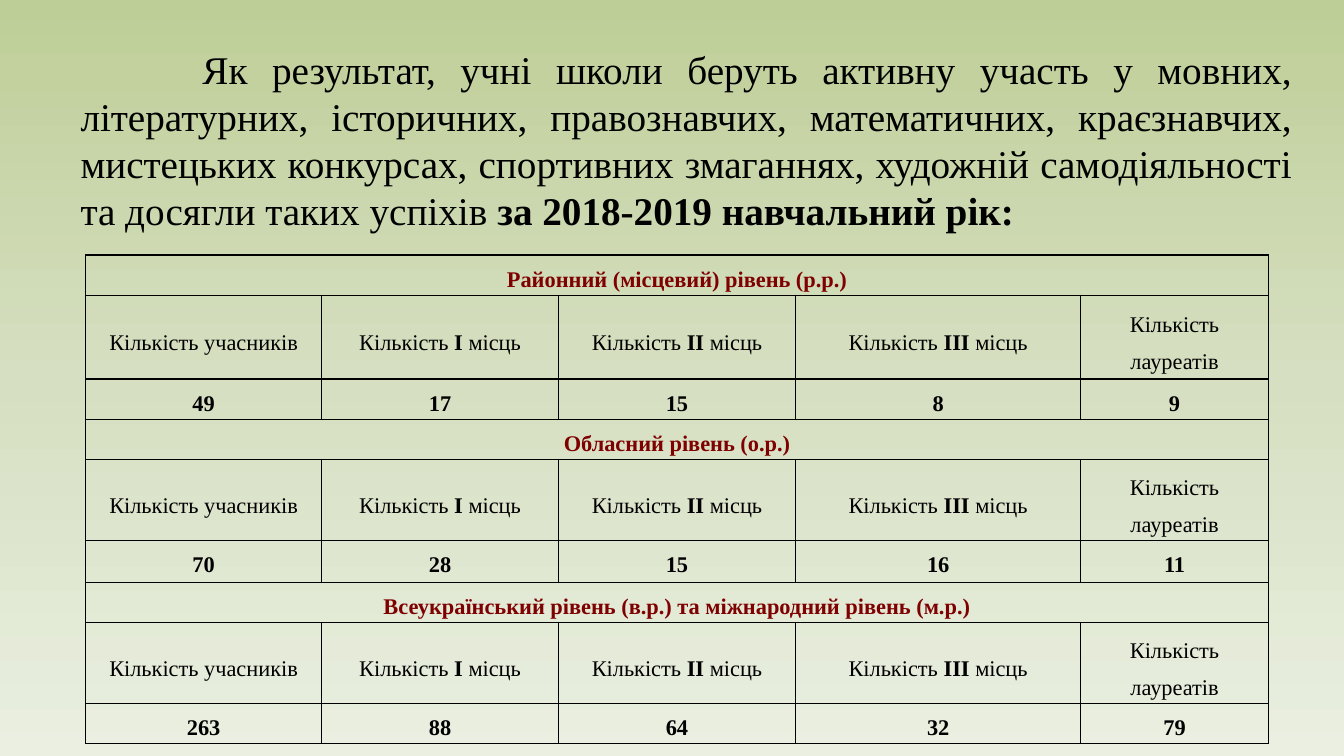
from copy import deepcopy

from lxml.etree import SubElement
from pptx import Presentation
from pptx.dml.color import RGBColor
from pptx.enum.text import MSO_ANCHOR, PP_ALIGN
from pptx.oxml.ns import qn
from pptx.util import Inches, Pt

COLORS = {"text": "000000", "level": "7E0000", "border": "000000"}
BACKGROUND = [(0, "BECE97"), (0.5, "D6DFC1"), (1, "EAEFE1")]
FONT = "Times New Roman"

INTRO = [
    ("Як результат, учні школи беруть активну участь у мовних, літературних, "
     "історичних, правознавчих, математичних, краєзнавчих, мистецьких конкурсах, "
     "спортивних змаганнях, художній самодіяльності та досягли таких успіхів ", False),
    ("за 2018-2019 навчальний рік:", True),
]
HEADINGS = [
    [("Кількість учасників", False)],
    *[[("Кількість ", False), (f"{place} ", True), ("місць", False)]
      for place in ("І", "ІІ", "ІІІ")],
    [("Кількість лауреатів", False)],
]
LEVELS = [
    ("Районний (місцевий) рівень (р.р.)", [49, 17, 15, 8, 9]),
    ("Обласний рівень (о.р.)", [70, 28, 15, 16, 11]),
    ("Всеукраїнський рівень (в.р.) та міжнародний рівень (м.р.)", [263, 88, 64, 32, 79]),
]
COL_WIDTHS = [2.34, 2.35, 2.35, 2.83, 1.86]
ROW_HEIGHTS = [0.37, 0.83, 0.37, 0.37, 0.66, 0.42, 0.37, 0.66, 0.37]


def write(tf, parts, size=16, color="text", align=PP_ALIGN.CENTER, spacing=None, after=None):
    """Fill the first paragraph with (text, bold) parts."""
    p = tf.paragraphs[0]
    p.alignment = align
    if spacing:
        p.line_spacing = spacing
    if after:
        p.space_after = Pt(after)
    for text, bold in parts:
        r = p.add_run()
        r.text = text
        r.font.name = FONT
        r.font.size = Pt(size)
        r.font.bold = bold
        r.font.color.rgb = RGBColor.from_string(COLORS[color])
    return p


def paint_background(s):
    fill = s.background.fill
    fill.gradient()
    fill.gradient_angle = 270
    stops = s.element.find(".//" + qn("a:gsLst"))
    stops.insert(1, deepcopy(stops[0]))
    for stop, (position, color) in zip(fill.gradient_stops, BACKGROUND):
        stop.position = position
        stop.color.rgb = RGBColor.from_string(color)


def add_intro(s, left, top, width, height):
    sp = s.shapes.add_textbox(Inches(left), Inches(top), Inches(width), Inches(height))
    tf = sp.text_frame
    tf.word_wrap = True
    p = write(tf, INTRO, size=28, align=PP_ALIGN.JUSTIFY)
    pPr = p._p.get_or_add_pPr()
    pPr.set("marL", str(Inches(0.5)))
    pPr.set("indent", str(Inches(1.21)))


def add_borders(cell):
    tcPr = cell._tc.get_or_add_tcPr()
    for side in ("a:lnL", "a:lnR", "a:lnT", "a:lnB"):
        ln = SubElement(tcPr, qn(side), w=str(Pt(1)))
        fill = SubElement(ln, qn("a:solidFill"))
        SubElement(fill, qn("a:srgbClr"), val=COLORS["border"])


def fill_cell(cell, parts, color="text", anchor=MSO_ANCHOR.TOP):
    cell.margin_left = cell.margin_right = Inches(0.07)
    cell.margin_top = cell.margin_bottom = 0
    cell.vertical_anchor = anchor
    write(cell.text_frame, parts, color=color, spacing=1.5, after=10)


def add_results(s, left, top, width, height):
    table = s.shapes.add_table(len(ROW_HEIGHTS), len(COL_WIDTHS), Inches(left), Inches(top),
                               Inches(width), Inches(height)).table
    table.first_row = table.horz_banding = False
    for column, column_width in zip(table.columns, COL_WIDTHS):
        column.width = Inches(column_width)
    for row, row_height in zip(table.rows, ROW_HEIGHTS):
        row.height = Inches(row_height)
    for cell in table.iter_cells():
        add_borders(cell)
        cell.fill.background()
    for i, (level, counts) in enumerate(LEVELS):
        row = 3 * i
        title = table.cell(row, 0)
        title.merge(table.cell(row, len(COL_WIDTHS) - 1))
        fill_cell(title, [(level, True)], color="level")
        for col, (heading, count) in enumerate(zip(HEADINGS, counts)):
            fill_cell(table.cell(row + 1, col), heading, anchor=MSO_ANCHOR.MIDDLE)
            fill_cell(table.cell(row + 2, col), [(str(count), True)])


def main():
    prs = Presentation()
    prs.slide_width, prs.slide_height = Inches(13.33), Inches(7.5)
    s = prs.slides.add_slide(prs.slide_layouts[6])
    paint_background(s)
    add_intro(s, 0.2, 0.4, 12.71, 1.99)
    add_results(s, 0.85, 2.53, sum(COL_WIDTHS), sum(ROW_HEIGHTS))
    prs.save("out.pptx")


if __name__ == "__main__":
    main()
